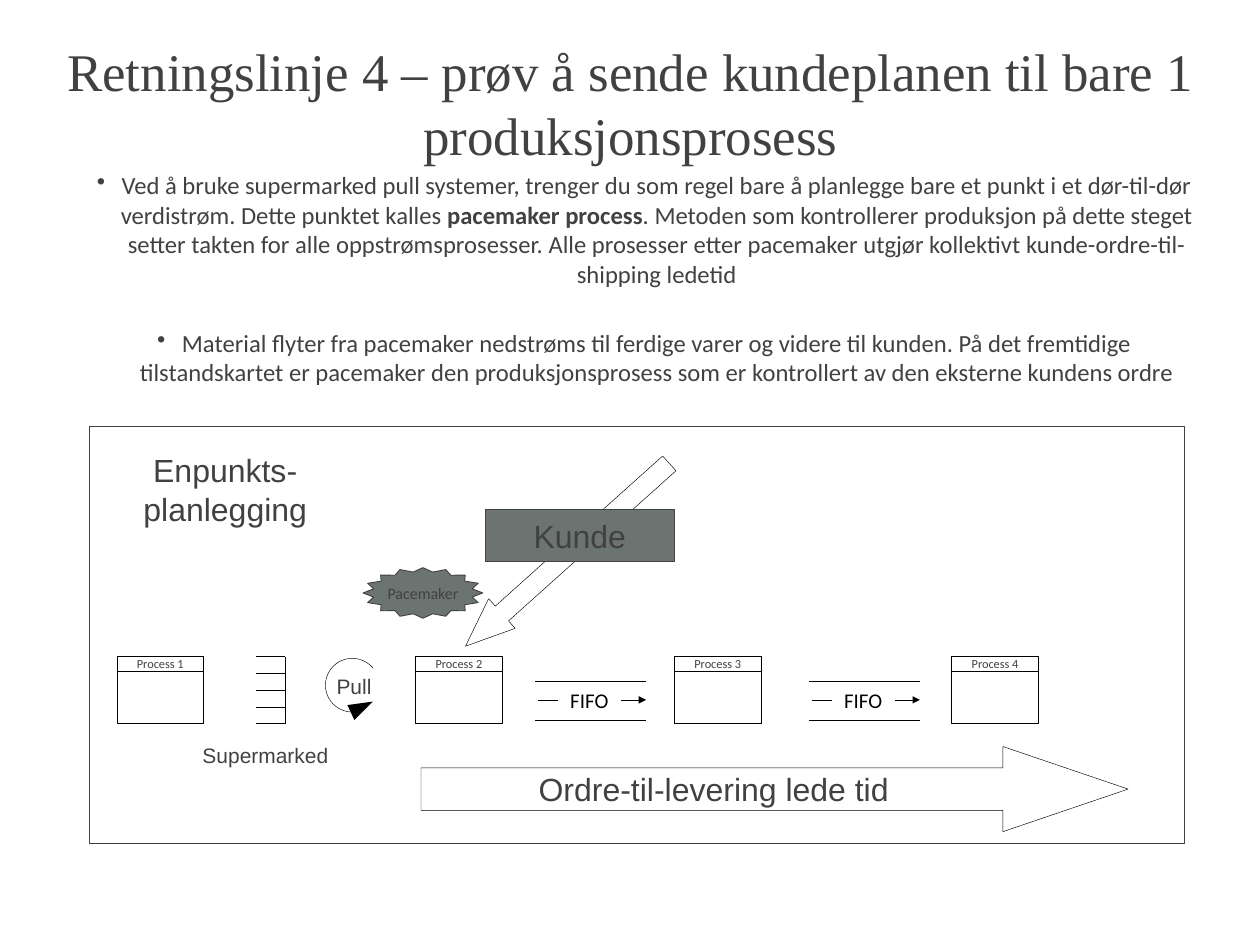
from lxml.etree import SubElement
from pptx import Presentation
from pptx.dml.color import RGBColor
from pptx.enum.shapes import MSO_CONNECTOR, MSO_SHAPE
from pptx.enum.text import MSO_ANCHOR, MSO_AUTO_SIZE, PP_ALIGN
from pptx.oxml.ns import qn
from pptx.util import Cm, Pt

COLORS = {"text": "414141", "black": "000000", "white": "FFFFFF", "accent": "6C7472"}
TITLE = "Retningslinje 4 – prøv å sende kundeplanen til bare 1 produksjonsprosess"
BULLETS = [
    [("Ved å bruke supermarked pull systemer, trenger du som regel bare å planlegge bare "
      "et punkt i et dør-til-dør verdistrøm. Dette punktet kalles ", False),
     ("pacemaker process", True),
     (". Metoden som kontrollerer produksjon på dette steget setter takten for alle "
      "oppstrømsprosesser. Alle prosesser etter pacemaker utgjør kollektivt "
      "kunde-ordre-til-shipping ledetid", False)],
    [("Material flyter fra pacemaker nedstrøms til ferdige varer og videre til kunden. "
      "På det fremtidige tilstandskartet er pacemaker den produksjonsprosess som er "
      "kontrollert av den eksterne kundens ordre", False)],
]
PROCESSES = [("Process 1", 3.35), ("Process 2", 11.91), ("Process 3", 19.33), ("Process 4", 27.28)]
FIFO_LEFTS = [15.34, 23.19]
LABELS = [  # text, size, left, top, width, height
    ("Ordre-til-levering lede tid", 26, 12.19, 21.89, 16.56, 1.47),
    ("Enpunkts- planlegging", 26, 3.3, 12.75, 6.32, 2.59),
    ("Supermarked", 17, 5.03, 21.11, 5.16, 1.09),
    ("Pull", 17, 8.97, 19.13, 2.36, 1.09),
]
PULL_HEAD = [(10.16, 20.65), (10.69, 20.12), (9.96, 20.22)]
PROCESS_TOP, PROCESS_W, HEADER_H, BODY_H = 18.83, 2.49, 0.41, 1.5
SHELF_LEFT, SHELF_RIGHT, SHELF_TOP, SHELF_GAP, SHELF_COUNT = 7.34, 8.18, 18.83, 0.48, 5
FIFO_W, FIFO_TOP, FIFO_MID, FIFO_BOTTOM = 3.18, 19.55, 20.07, 20.65

prs = Presentation()
prs.slide_width, prs.slide_height = Cm(36.12), Cm(27.1)
s = prs.slides.add_slide(prs.slide_layouts[5])


def rgb(name):
    return RGBColor.from_string(COLORS[name])


def set_insets(tf, x, y):
    tf.margin_left = tf.margin_right = Cm(x)
    tf.margin_top = tf.margin_bottom = Cm(y)


def style_run(r, size, font, color="text"):
    r.font.size, r.font.name = Pt(size), font
    r.font.color.rgb = rgb(color)


def write(sp, text, size, font="Arial", color="text", insets=(0, 0), wrap=True,
          anchor=MSO_ANCHOR.MIDDLE):
    """Put one centred, single-style paragraph into a shape."""
    tf = sp.text_frame
    tf.text = text
    tf.word_wrap, tf.auto_size, tf.vertical_anchor = wrap, MSO_AUTO_SIZE.NONE, anchor
    set_insets(tf, *insets)
    p = tf.paragraphs[0]
    p.alignment = PP_ALIGN.CENTER
    style_run(p.runs[0], size, font, color)


def paint(sp, fill=None, line="black", width=0.38):
    sp.shadow.inherit = False
    if fill:
        sp.fill.solid()
        sp.fill.fore_color.rgb = rgb(fill)
    else:
        sp.fill.background()
    if line:
        sp.line.color.rgb = rgb(line)
        sp.line.width = Pt(width)
    else:
        sp.line.fill.background()


def add_shape(kind, x, y, w, h, fill=None, line="black", width=0.38, adj=()):
    sp = s.shapes.add_shape(kind, Cm(x), Cm(y), Cm(w), Cm(h))
    for i, value in enumerate(adj):
        sp.adjustments[i] = value
    paint(sp, fill, line, width)
    return sp


def add_textbox(x, y, w, h):
    return s.shapes.add_textbox(Cm(x), Cm(y), Cm(w), Cm(h))


def add_line(x1, y1, x2, y2, arrow=False):
    c = s.shapes.add_connector(MSO_CONNECTOR.STRAIGHT, Cm(x1), Cm(y1), Cm(x2), Cm(y2))
    c.line.color.rgb = rgb("black")
    c.line.width = Pt(0.38)
    if arrow:
        SubElement(c.line._get_or_add_ln(), qn("a:tailEnd"), type="triangle")
    SubElement(c._element.spPr, qn("a:effectLst"))


def add_bullets(x, y, w, h):
    tf = add_textbox(x, y, w, h).text_frame
    tf.word_wrap = True
    set_insets(tf, 0, 0)
    for i, parts in enumerate(BULLETS):
        p = tf.add_paragraph() if i else tf.paragraphs[0]
        p.alignment = PP_ALIGN.CENTER
        p.space_before = Pt(32 if i else 0)
        pPr = p._p.get_or_add_pPr()
        pPr.set("marL", str(Cm(0.71)))
        pPr.set("indent", str(-Cm(0.71)))
        SubElement(pPr, qn("a:buChar"), char="•")
        for text, bold in parts:
            r = p.add_run()
            r.text = text
            style_run(r, 20, "Calibri")
            r.font.bold = bold


def add_process(name, x):
    add_shape(MSO_SHAPE.RECTANGLE, x, PROCESS_TOP + HEADER_H, PROCESS_W, BODY_H, "white")
    header = add_shape(MSO_SHAPE.RECTANGLE, x, PROCESS_TOP, PROCESS_W, HEADER_H)
    write(header, name, 10, "Calibri", insets=(0.1, 0), wrap=False)


def add_fifo(x):
    for y in (FIFO_TOP, FIFO_BOTTOM):
        add_line(x, y, x + FIFO_W, y)
    write(add_textbox(x + 0.97, 19.71, 1.17, 0.74), "FIFO", 17, "Calibri", "black", wrap=False)
    add_line(x + 0.08, FIFO_MID, x + 0.66, FIFO_MID)
    add_line(x + 2.46, FIFO_MID, x + FIFO_W, FIFO_MID, arrow=True)


def add_supermarket():
    ys = [SHELF_TOP + i * SHELF_GAP for i in range(SHELF_COUNT)]
    for y in ys:
        add_line(SHELF_LEFT, y, SHELF_RIGHT, y)
    add_line(SHELF_RIGHT, ys[0], SHELF_RIGHT, ys[-1])


def add_pull():
    # Arc angles count in 60000ths of a degree, adjustments in 100000ths
    add_shape(MSO_SHAPE.ARC, 9.33, 18.88, 1.54, 1.54, adj=(90 * 0.6, 320 * 0.6))
    points = [(Cm(x), Cm(y)) for x, y in PULL_HEAD]
    builder = s.shapes.build_freeform(*points[0])
    builder.add_line_segments(points[1:], close=True)
    paint(builder.convert_to_shape(), "black", None)


title = s.shapes.title
title.left, title.top, title.width, title.height = Cm(1), Cm(-0.46), Cm(34.14), Cm(6.78)
write(title, TITLE, 43, "Times New Roman", insets=(0.15, 0.15))
add_bullets(2.72, 4.88, 31.5, 8.86)

add_supermarket()
add_pull()
order = add_shape(MSO_SHAPE.RIGHT_ARROW, 12.34, 15.34, 7.85, 1.14, adj=(0.5, 1.23))
order.rotation = 138.1
pacemaker = add_shape(MSO_SHAPE.STAR_16_POINT, 10.41, 16.28, 3.43, 1.45,
                      "accent", "text", 0.75, adj=(0.42,))
write(pacemaker, "Pacemaker", 13, "Calibri", wrap=False)
for name, x in PROCESSES:
    add_process(name, x)
for x in FIFO_LEFTS:
    add_fifo(x)
add_shape(MSO_SHAPE.RIGHT_ARROW, 12.07, 21.41, 20.27, 2.44, adj=(0.5, 1.47))
customer = add_shape(MSO_SHAPE.RECTANGLE, 13.92, 14.61, 5.41, 1.5, "accent", "text", 0.75)
write(customer, "Kunde", 26, insets=(0.36, 0.18))
add_shape(MSO_SHAPE.RECTANGLE, 2.57, 12.24, 31.39, 11.96, line="text", width=0.75)
for text, size, *box in LABELS:
    write(add_textbox(*box), text, size, insets=(0.36, 0.18), anchor=MSO_ANCHOR.TOP)

prs.save("out.pptx")
